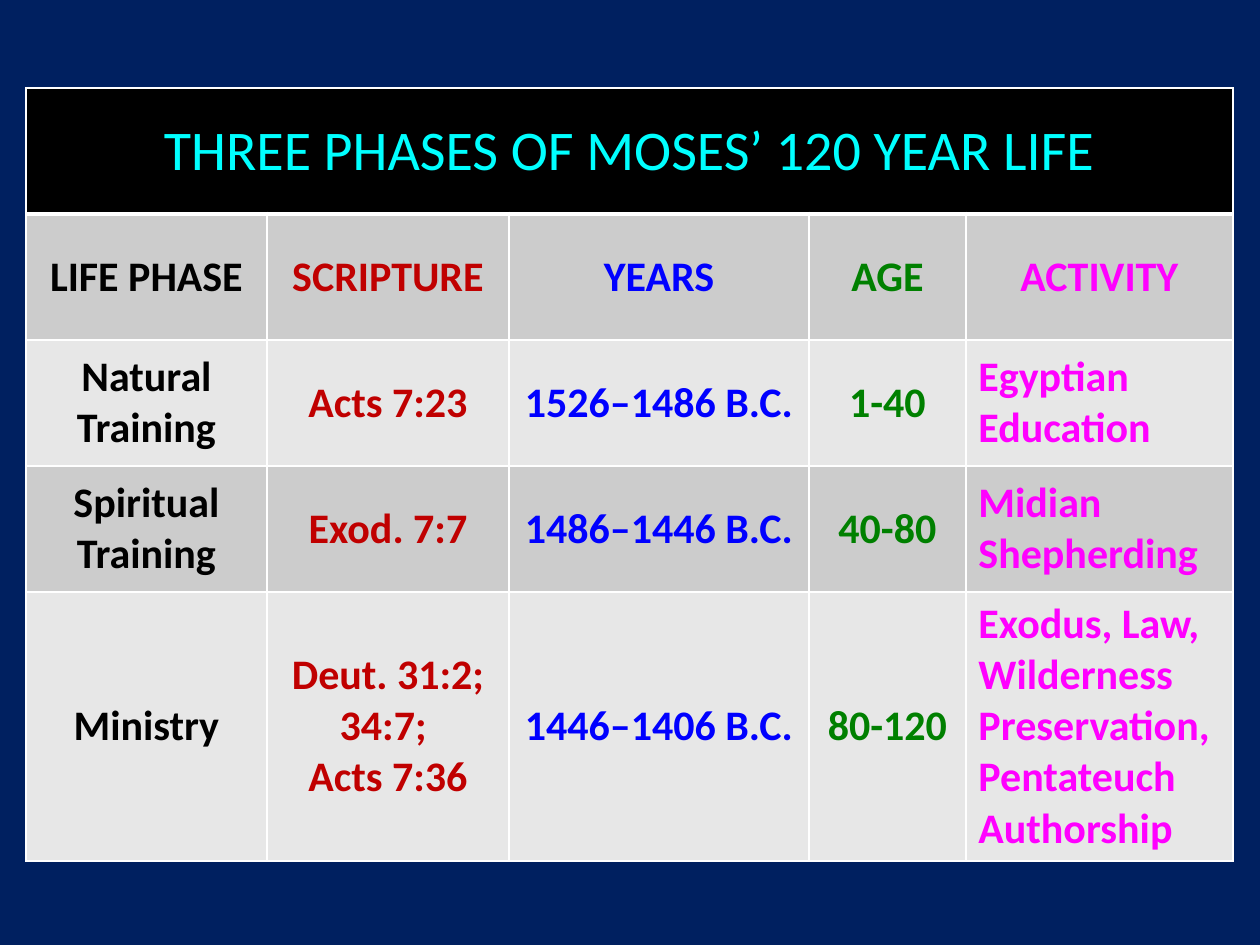
from dataclasses import dataclass

from lxml.etree import SubElement
from pptx import Presentation
from pptx.dml.color import RGBColor
from pptx.enum.text import MSO_ANCHOR, PP_ALIGN
from pptx.oxml.ns import qn
from pptx.table import _Cell
from pptx.util import Emu, Pt

NAVY = RGBColor(0x00, 0x20, 0x60)
BLACK = RGBColor(0x00, 0x00, 0x00)
WHITE = RGBColor(0xFF, 0xFF, 0xFF)
CYAN = RGBColor(0x00, 0xFF, 0xFF)
RED = RGBColor(0xC0, 0x00, 0x00)
BLUE = RGBColor(0x00, 0x00, 0xFF)
GREEN = RGBColor(0x00, 0x80, 0x00)
MAGENTA = RGBColor(0xFF, 0x00, 0xFF)
DARK_BAND = RGBColor(0xCC, 0xCC, 0xCC)
LIGHT_BAND = RGBColor(0xE7, 0xE7, 0xE7)

FONT = "Calibri"
PX_PER_INCH = 126
ROW_HEIGHT = 126
HEADING = "THREE PHASES OF MOSES’ 120 YEAR LIFE"


@dataclass(frozen=True)
class Column:
    label: str
    width: int
    color: RGBColor
    entry_align: PP_ALIGN = PP_ALIGN.CENTER


COLUMNS = [
    Column("LIFE PHASE", 241, BLACK),
    Column("SCRIPTURE", 242, RED),
    Column("YEARS", 300, BLUE),
    Column("AGE", 157, GREEN),
    Column("ACTIVITY", 267, MAGENTA, PP_ALIGN.LEFT),
]

PHASES = [
    ("Natural Training", "Acts 7:23", "1526–1486 B.C.", "1-40", "Egyptian Education"),
    ("Spiritual Training", "Exod. 7:7", "1486–1446 B.C.", "40-80", "Midian Shepherding"),
    ("Ministry", "Deut. 31:2; 34:7; \nActs 7:36", "1446–1406 B.C.", "80-120",
     "Exodus, Law, Wilderness Preservation, Pentateuch Authorship"),
]


def px(count: int) -> Emu:
    return Emu(round(count * 914400 / PX_PER_INCH))


def set_borders(cell: _Cell, top: int = 1, bottom: int = 1) -> None:
    """Give all four sides a white line; widths are in points."""
    properties = cell._tc.get_or_add_tcPr()
    for side, width in (("L", 1), ("R", 1), ("T", top), ("B", bottom)):
        line = SubElement(properties, qn(f"a:ln{side}"), w=str(Pt(width)))
        fill = SubElement(line, qn("a:solidFill"))
        SubElement(fill, qn("a:srgbClr"), val=str(WHITE))


def fill_cell(cell: _Cell, text: str, color: RGBColor, background: RGBColor,
              align: PP_ALIGN = PP_ALIGN.CENTER, size: int = 24, bold: bool = True) -> None:
    """Write one paragraph per line of text on a plain background."""
    cell.fill.solid()
    cell.fill.fore_color.rgb = background
    cell.vertical_anchor = MSO_ANCHOR.MIDDLE
    frame = cell.text_frame
    for index, line in enumerate(text.split("\n")):
        paragraph = frame.add_paragraph() if index else frame.paragraphs[0]
        paragraph.alignment = align
        run = paragraph.add_run()
        run.text = line
        run.font.name = FONT
        run.font.size = Pt(size)
        run.font.bold = bold
        run.font.color.rgb = color


def main() -> None:
    deck = Presentation()
    deck.slide_width, deck.slide_height = px(1260), px(945)
    slide = deck.slides.add_slide(deck.slide_layouts[6])
    slide.background.fill.solid()
    slide.background.fill.fore_color.rgb = NAVY

    row_count = len(PHASES) + 2
    table_width = sum(column.width for column in COLUMNS)
    phases_frame = slide.shapes.add_table(
        row_count, len(COLUMNS), px(26), px(88), px(table_width), px(ROW_HEIGHT * row_count))
    phases_table = phases_frame.table
    for grid_column, column in zip(phases_table.columns, COLUMNS):
        grid_column.width = px(column.width)

    for number in range(len(COLUMNS)):
        set_borders(phases_table.cell(0, number), bottom=3)
    heading_cell = phases_table.cell(0, 0)
    heading_cell.merge(phases_table.cell(0, len(COLUMNS) - 1))
    fill_cell(heading_cell, HEADING, CYAN, BLACK, size=32, bold=False)

    labels = tuple(column.label for column in COLUMNS)
    for row, entries in enumerate([labels, *PHASES], start=1):
        band = DARK_BAND if row % 2 else LIGHT_BAND
        for number, (column, entry) in enumerate(zip(COLUMNS, entries)):
            cell = phases_table.cell(row, number)
            set_borders(cell, top=3 if row == 1 else 1)
            align = PP_ALIGN.CENTER if row == 1 else column.entry_align
            fill_cell(cell, entry, column.color, band, align)

    phases_frame.height = px(769)
    deck.save("out.pptx")


if __name__ == "__main__":
    main()
